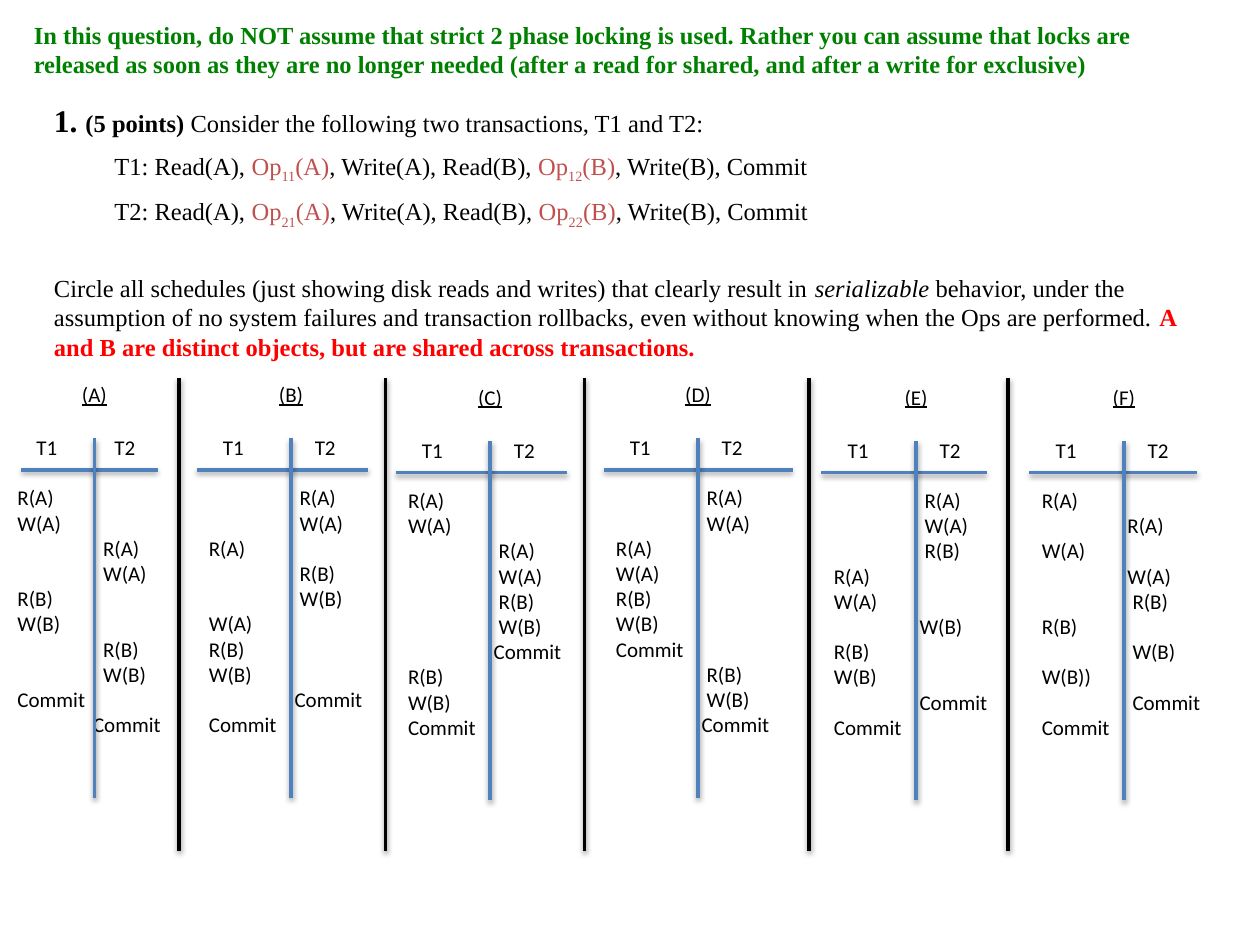
from lxml.etree import SubElement
from pptx import Presentation
from pptx.dml.color import RGBColor
from pptx.enum.shapes import MSO_CONNECTOR
from pptx.enum.text import MSO_AUTO_SIZE, PP_ALIGN
from pptx.oxml.ns import qn
from pptx.util import Inches, Pt

HUES = {"text": "000000", "note": "008000", "op": "C0504D",
        "alert": "FF0000", "axis": "4F81BD", "wall": "000000"}
SERIF, SANS = "Times New Roman", "Calibri"

# Marks before a step set how far it is indented; no mark means T1.
INDENT = {"<": 0.6, ">": 0.68, "+": 0.72}
# name, text left, top, width, axis x, bar left, bar right, T1 and T2 offsets, steps
PLANS = [
    ("(A)", 0.04, 3.4, 1.42, 0.75, 0.17, 1.25, 0.15, 0.77,
     "R(A) W(A) >R(A) >W(A) R(B) W(B) >R(B) >W(B) Commit <Commit"),
    ("(B)", 1.56, 3.4, 1.5, 2.31, 1.56, 2.92, 0.11, 0.84,
     "+R(A) +W(A) R(A) +R(B) +W(B) W(A) R(B) W(B) >Commit Commit"),
    ("(C)", 3.14, 3.42, 1.5, 3.89, 3.14, 4.5, 0.11, 0.84,
     "R(A) W(A) +R(A) +W(A) +R(B) +W(B) >Commit R(B) W(B) Commit"),
    ("(D)", 4.79, 3.4, 1.5, 5.54, 4.79, 6.29, 0.11, 0.84,
     "+R(A) +W(A) R(A) W(A) R(B) W(B) Commit +R(B) +W(B) >Commit"),
    ("(E)", 6.52, 3.42, 1.67, 7.27, 6.52, 7.83, 0.11, 0.84,
     "+R(A) +W(A) +R(B) R(A) W(A) >W(B) R(B) W(B) >Commit Commit"),
    ("(F)", 8.17, 3.42, 1.67, 8.92, 8.17, 9.5, 0.11, 0.84,
     "R(A) >R(A) W(A) >W(A) +R(B) R(B) +W(B) W(B)) +Commit Commit"),
]
WALLS = [1.42, 3.06, 4.64, 6.42, 8]


def add_box(slide, left, top, width, height):
    box = slide.shapes.add_textbox(*map(Inches, (left, top, width, height)))
    frame = box.text_frame
    frame.word_wrap = True
    frame.auto_size = MSO_AUTO_SIZE.SHAPE_TO_FIT_TEXT
    return frame


def add_para(frame, first, indent=0.0):
    para = frame.paragraphs[0] if first else frame.add_paragraph()
    if indent:
        props = para._p.get_or_add_pPr()
        props.set("marL", str(Inches(indent)))
        props.set("indent", "0")
    return para


def set_font(font, name, size, hue="text"):
    font.name = name
    font.size = Pt(size)
    font.color.rgb = RGBColor.from_string(HUES[hue])


def add_run(para, text, hue=None, bold=None, sub=False):
    run = para.add_run()
    run.text = text
    if hue:
        run.font.color.rgb = RGBColor.from_string(HUES[hue])
    run.font.bold = bold
    if sub:
        run._r.get_or_add_rPr().set("baseline", "-25000")
    return run


def add_line(slide, x1, y1, x2, y2, hue):
    """Draw a straight line with a soft shadow below it."""
    line = slide.shapes.add_connector(
        MSO_CONNECTOR.STRAIGHT, *map(Inches, (x1, y1, x2, y2)))
    line.line.color.rgb = RGBColor.from_string(HUES[hue])
    line.line.width = Pt(2)
    effects = SubElement(line._element.spPr, qn("a:effectLst"))
    shadow = SubElement(effects, qn("a:outerShdw"), blurRad=str(Pt(3.1)),
                        dist=str(Pt(1.6)), dir="5400000", rotWithShape="0")
    color = SubElement(shadow, qn("a:srgbClr"), val="000000")
    SubElement(color, qn("a:alpha"), val="38000")


def add_label(slide, text, left, top, width):
    """Add one short line of text and return its paragraph."""
    para = add_para(add_box(slide, left, top, width, 0.3), True)
    set_font(para.font, SANS, 12)
    add_run(para, text)
    return para


def add_note(slide):
    para = add_para(add_box(slide, 0.17, 0.11, 9.58, 0.57), True)
    set_font(para.font, SERIF, 14, "note")
    para.font.bold = True
    add_run(para, "In this question, do NOT assume that strict 2 phase locking is "
                  "used. Rather you can assume that locks are released as soon as "
                  "they are no longer needed (after a read for shared, and after "
                  "a write for exclusive)")


def add_ops(frame, num):
    """List the steps of one transaction."""
    para = add_para(frame, False, 0.48)
    para.space_before = Pt(7)
    set_font(para.font, SERIF, 14)
    add_run(para, f"T{num}: Read(A), ")
    for step, (item, rest) in enumerate(
            [("A", ", Write(A), Read(B), "), ("B", ", Write(B), Commit")], 1):
        add_run(para, "Op", "op")
        add_run(para, f"{num}{step}", "op", sub=True)
        add_run(para, f"({item})", "op")
        add_run(para, rest)


def add_task(slide):
    frame = add_box(slide, 0.33, 0.75, 9.42, 2.17)
    para = add_para(frame, True)
    set_font(para.font, SERIF, 14)
    add_run(para, "1. ", bold=True).font.size = Pt(18)
    add_run(para, "(5 points) ", bold=True)
    add_run(para, "Consider the following two transactions, T1 and T2:")
    for num in (1, 2):
        add_ops(frame, num)
    para = add_para(frame, False)
    para.space_before = Pt(24.5)
    set_font(para.font, SERIF, 14)
    add_run(para, "Circle all schedules (just showing disk reads and writes) that "
                  "clearly result in ")
    add_run(para, "serializable ").font.italic = True
    add_run(para, "behavior, under the assumption of no system failures and "
                  "transaction rollbacks, even without knowing when the Ops are "
                  "performed. ")
    add_run(para, "A and B are distinct objects, but are shared across "
                  "transactions.", "alert", True)


def add_plan(slide, name, left, top, width, axis, start, end, one, two, steps):
    """Draw one schedule: its name, its T1 and T2 columns and its axes."""
    title = add_label(slide, name, axis - 0.3, top - 0.42, 0.6)
    title.alignment = PP_ALIGN.CENTER
    title.font.underline = True
    for head, shift in (("T1", one), ("T2", two)):
        add_label(slide, head, left + shift, top, 0.5)

    frame = add_box(slide, left, top + 0.4, width, 2.12)
    for row, step in enumerate(steps.split()):
        para = add_para(frame, row == 0, INDENT.get(step[0], 0))
        set_font(para.font, SANS, 12)
        add_run(para, step.lstrip("<>+"))

    add_line(slide, start, top + 0.33, end, top + 0.33, "axis")
    add_line(slide, axis, top + 0.08, axis, top + 2.93, "axis")


def main():
    deck = Presentation()
    deck.slide_width, deck.slide_height = Inches(10), Inches(7.5)
    slide = deck.slides.add_slide(deck.slide_layouts[6])
    add_task(slide)
    for plan in PLANS:
        add_plan(slide, *plan)
    for x in WALLS:
        add_line(slide, x, 3, x, 6.75, "wall")
    add_note(slide)
    deck.save("out.pptx")


if __name__ == "__main__":
    main()
